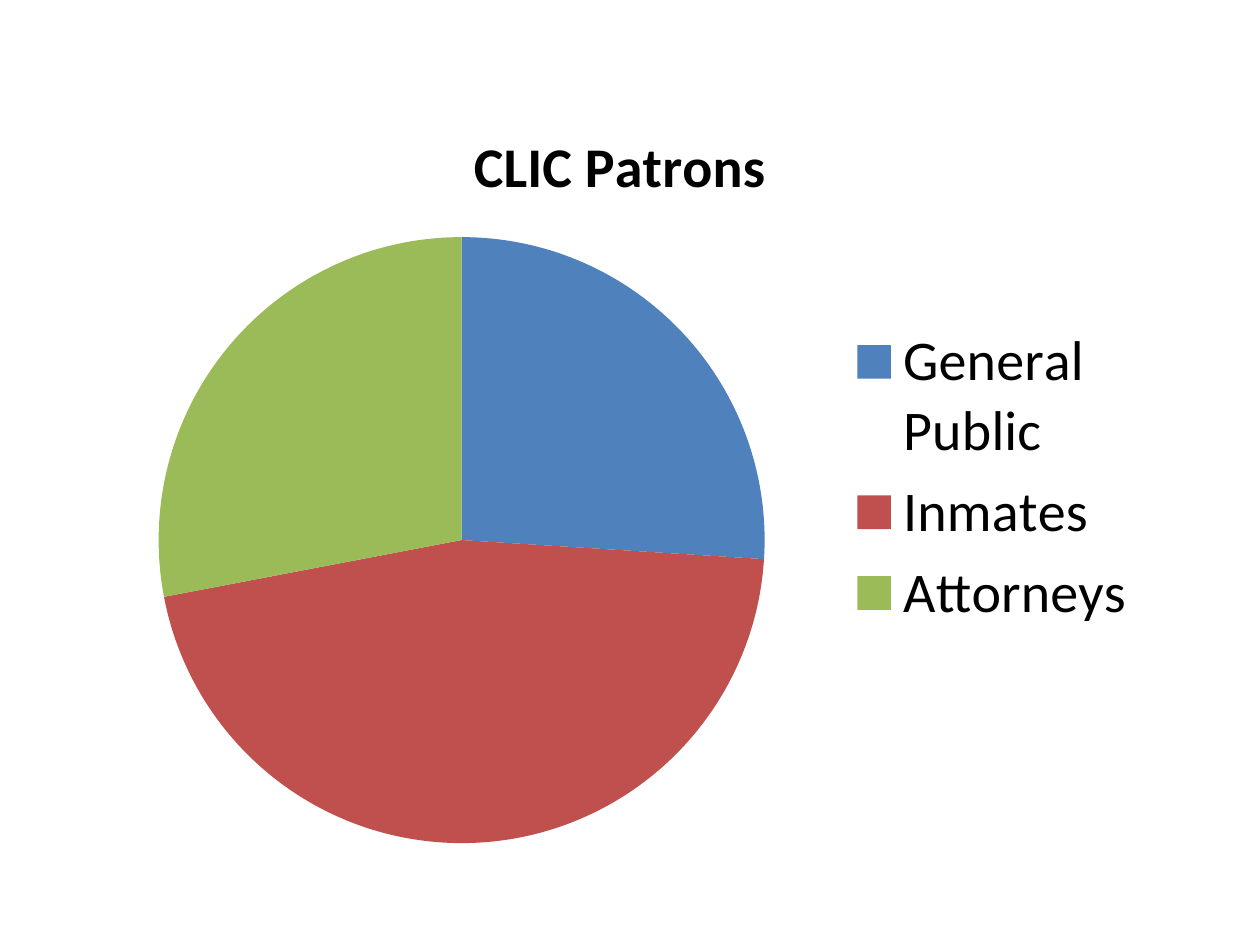
from dataclasses import dataclass

from pptx import Presentation
from pptx.chart.data import CategoryChartData
from pptx.dml.color import RGBColor
from pptx.enum.chart import XL_CHART_TYPE, XL_LEGEND_POSITION
from pptx.util import Inches, Pt

PIE = XL_CHART_TYPE.PIE
LEGEND_RIGHT = XL_LEGEND_POSITION.RIGHT


@dataclass(frozen=True)
class Theme:
    face: str = "Calibri"
    ink: str = "000000"
    slices: tuple = ("4F81BD", "C0504D", "9BBB59")
    body_size: int = 18
    display_size: int = 32


THEME = Theme()
HEADING = "CLIC Patrons"
PATRON_SHARES = {"General Public": 26, "Inmates": 46, "Attorneys": 28}


def style_font(font, size=THEME.body_size, bold=False, color=THEME.ink):
    font.name = THEME.face
    font.size = Pt(size)
    font.bold = bold
    font.color.rgb = RGBColor.from_string(color)


def write_text(frame, text, **style):
    frame.text = text
    style_font(frame.paragraphs[0].runs[0].font, **style)


def add_patron_pie(slide, left, top, width, height):
    shares = CategoryChartData()
    shares.categories = list(PATRON_SHARES)
    shares.add_series(HEADING, list(PATRON_SHARES.values()))
    chart = slide.shapes.add_chart(PIE, left, top, width, height, shares).chart
    style_font(chart.font)

    chart.has_title = True
    write_text(chart.chart_title.text_frame, HEADING,
               size=THEME.display_size, bold=True)
    chart.chart_title.include_in_layout = False

    chart.has_legend = True
    chart.legend.position = LEGEND_RIGHT
    chart.legend.include_in_layout = False
    style_font(chart.legend.font, size=THEME.display_size)

    plot = chart.plots[0]
    plot.vary_by_categories = True
    for index, color in enumerate(THEME.slices):
        fill = plot.series[0].points[index].format.fill
        fill.solid()
        fill.fore_color.rgb = RGBColor.from_string(color)


def main():
    deck = Presentation()
    deck.slide_width, deck.slide_height = Inches(10), Inches(7.5)
    slide = deck.slides.add_slide(deck.slide_layouts[6])
    add_patron_pie(slide, Inches(0.67), Inches(0.75), Inches(8.5), Inches(6.08))
    deck.save("out.pptx")


if __name__ == "__main__":
    main()
